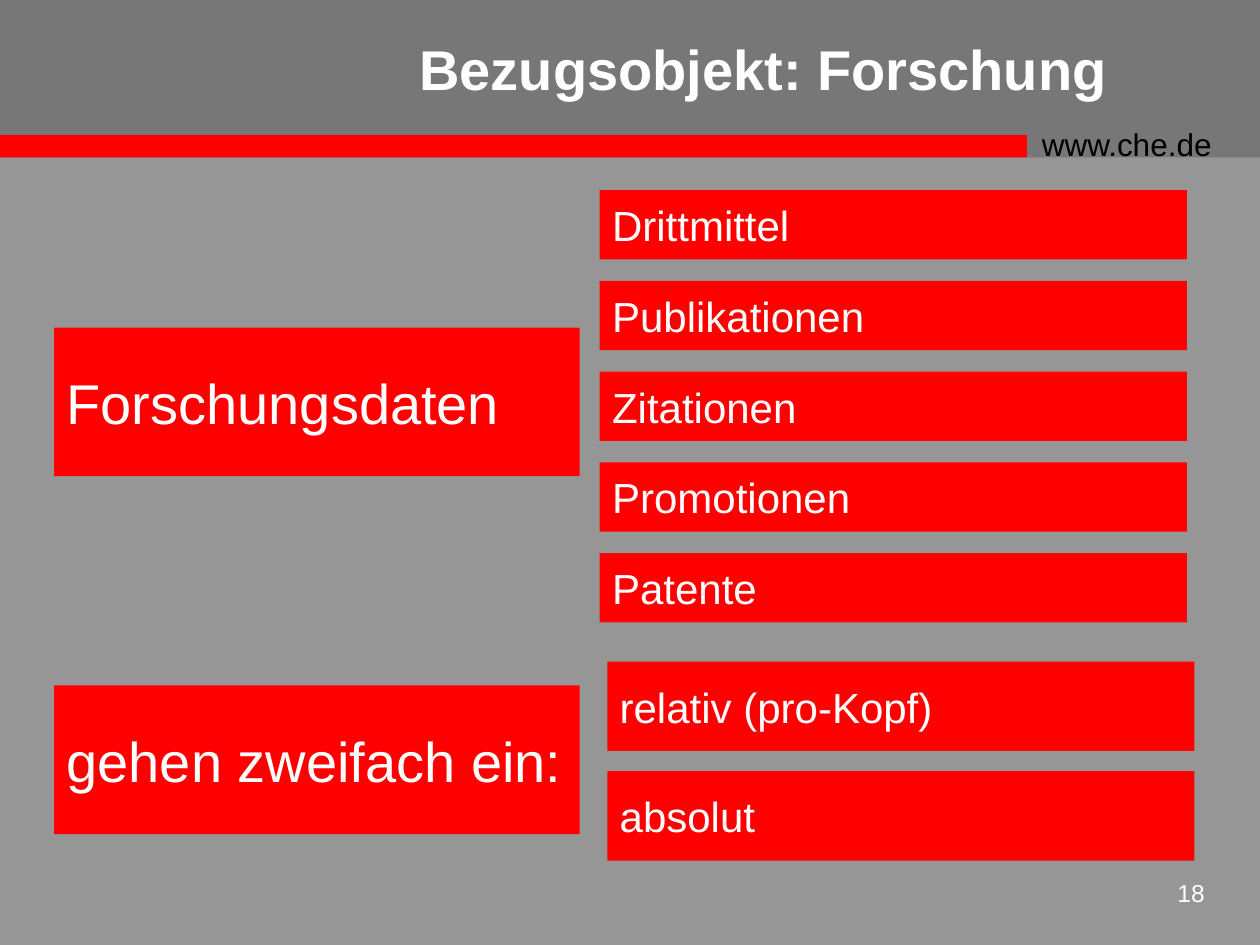
from dataclasses import dataclass

from pptx import Presentation
from pptx.dml.color import RGBColor
from pptx.enum.shapes import MSO_SHAPE as Shape
from pptx.enum.text import MSO_ANCHOR as Anchor, PP_ALIGN as Align
from pptx.util import Inches, Pt


@dataclass(frozen=True)
class Theme:
    font: str = "Arial"
    background: RGBColor = RGBColor(0x96, 0x96, 0x96)
    header: RGBColor = RGBColor(0x77, 0x77, 0x77)
    accent: RGBColor = RGBColor(0xFF, 0x00, 0x00)
    light: RGBColor = RGBColor(0xFF, 0xFF, 0xFF)
    dark: RGBColor = RGBColor(0x00, 0x00, 0x00)
    large: int = 32
    medium: int = 24
    address: int = 18
    small: int = 14


THEME = Theme()


def place(shape, box):
    shape.left, shape.top, shape.width, shape.height = map(Inches, box)


def write(shape, text, size, color, align=Align.LEFT, bold=False):
    shape.text_frame.text = text
    paragraph = shape.text_frame.paragraphs[0]
    paragraph.alignment = align
    font = paragraph.runs[0].font
    font.name = THEME.font
    font.size = Pt(size)
    font.bold = bold
    font.color.rgb = color


def add_bar(shapes, box, color):
    bar = shapes.add_shape(Shape.RECTANGLE, *map(Inches, box))
    bar.shadow.inherit = False
    bar.fill.solid()
    bar.fill.fore_color.rgb = color
    bar.line.fill.background()
    return bar


def add_card(shapes, box, text, size):
    card = add_bar(shapes, box, THEME.accent)
    card.text_frame.word_wrap = False
    card.text_frame.vertical_anchor = Anchor.MIDDLE
    write(card, text, size, THEME.light)


def add_label(shapes, box, text, size, color, align=Align.LEFT):
    label = shapes.add_textbox(*map(Inches, box))
    label.text_frame.word_wrap = True
    write(label, text, size, color, align)


def add_header(slide, box):
    left, top, width, height = box
    stripe_height, stripe_width = 0.18, 8.15
    stripe_top = top + height - stripe_height
    add_bar(slide.shapes, box, THEME.header)
    add_bar(slide.shapes, (left, stripe_top, stripe_width, stripe_height), THEME.accent)
    add_label(slide.shapes, (left + 8.17, top + 0.94, 1.75, 0.4),
              "www.che.de", THEME.address, THEME.dark)

    title = slide.shapes.title
    place(title, (left + 2.48, top, 7.16, 1.08))
    title.text_frame.word_wrap = True
    title.text_frame.vertical_anchor = Anchor.MIDDLE
    write(title, "Bezugsobjekt: Forschung", THEME.large, THEME.light, Align.CENTER, True)
    title.element.getparent().append(title.element)


def add_card_stack(slide, box, texts, card_height):
    left, top, width, height = box
    step = (height - card_height) / (len(texts) - 1)
    group = slide.shapes.add_group_shape()
    for index, text in enumerate(texts):
        add_card(group.shapes, (left, top + index * step, width, card_height),
                 text, THEME.medium)


def add_topic(slide, box, text):
    add_card(slide.shapes, box, text, THEME.large)


def main():
    presentation = Presentation()
    presentation.slide_width = Inches(10)
    presentation.slide_height = Inches(7.5)
    slide = presentation.slides.add_slide(presentation.slide_layouts[5])
    slide.background.fill.solid()
    slide.background.fill.fore_color.rgb = THEME.background

    add_header(slide, (0, 0, 10, 1.25))
    add_topic(slide, (0.43, 2.6, 4.17, 1.18), "Forschungsdaten")
    add_card_stack(slide, (4.76, 1.51, 4.66, 3.43),
                   ["Drittmittel", "Publikationen", "Zitationen", "Promotionen", "Patente"],
                   0.55)
    add_topic(slide, (0.43, 5.44, 4.17, 1.18), "gehen zweifach ein:")
    add_card_stack(slide, (4.82, 5.25, 4.66, 1.58),
                   ["relativ (pro-Kopf)", "absolut"], 0.71)
    add_label(slide.shapes, (9.08, 6.92, 0.58, 0.42), "18",
              THEME.small, THEME.light, Align.RIGHT)
    presentation.save("out.pptx")


if __name__ == "__main__":
    main()
